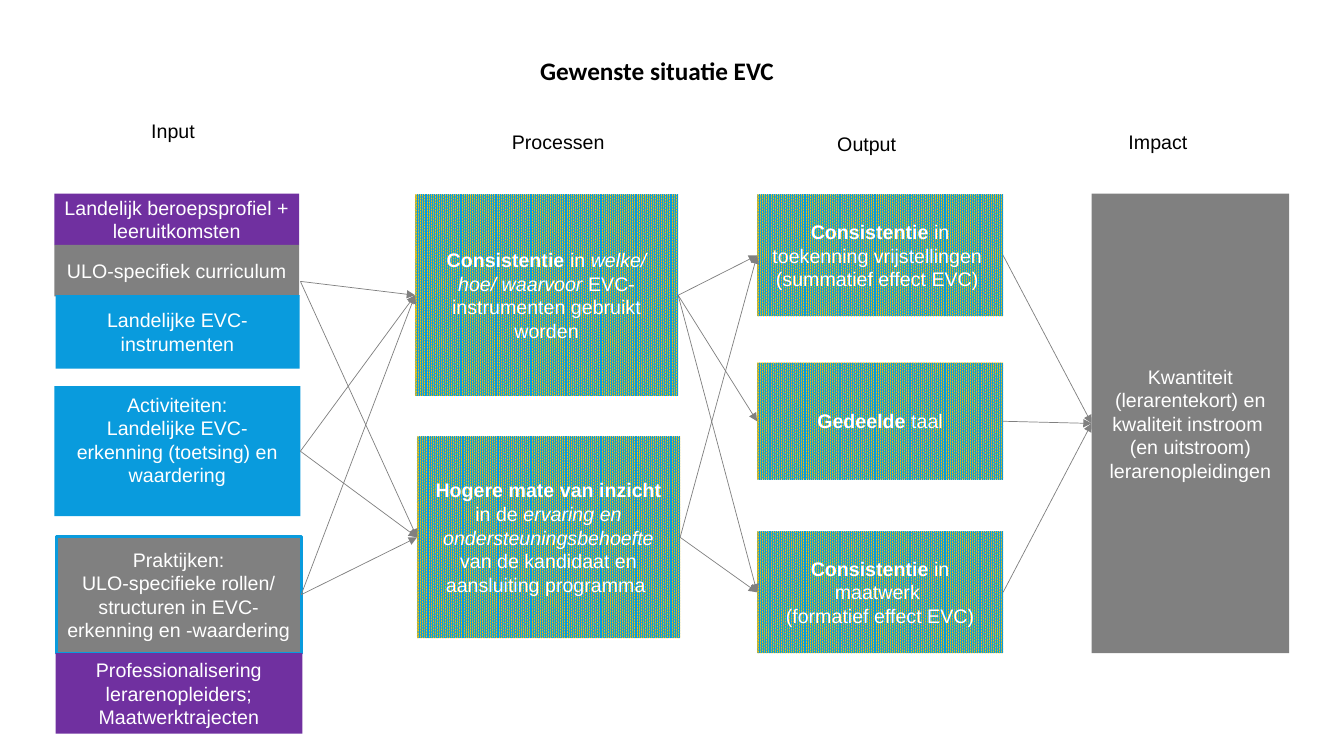
from lxml.etree import SubElement
from pptx import Presentation
from pptx.dml.color import RGBColor
from pptx.enum.dml import MSO_PATTERN
from pptx.enum.shapes import MSO_CONNECTOR, MSO_SHAPE
from pptx.enum.text import MSO_ANCHOR, PP_ALIGN
from pptx.oxml.ns import qn
from pptx.util import Cm, Pt

COLORS = {
    "blue": "099BDD",
    "gold": "FFC000",
    "grey": "808080",
    "purple": "7030A0",
    "white": "FFFFFF",
    "black": "000000",
}
BODY = {"name": "Arial", "size": Pt(14)}
TITLE = {"name": "Calibri", "size": Pt(18), "bold": True}
BOLD, ITALIC, PLAIN = {"bold": True}, {"italic": True}, {}
LEFT, TOP, RIGHT = 1, 0, 3
EMPTY_LINE = 0.57


def rgb(color):
    return RGBColor.from_string(COLORS[color])


def write(frame, paragraphs, color, align, base=BODY):
    """Fill a text frame; a paragraph is a string or a list of (text, format)."""
    frame.word_wrap = True
    for number, content in enumerate(paragraphs):
        paragraph = frame.paragraphs[0] if number == 0 else frame.add_paragraph()
        paragraph.alignment = align
        runs = [(content, PLAIN)] if isinstance(content, str) else content
        for words, extra in runs:
            run = paragraph.add_run()
            run.text = words
            run.font.color.rgb = rgb(color)
            for attribute, value in {**base, **extra}.items():
                setattr(run.font, attribute, value)


def add_label(slide, box, words, align=PP_ALIGN.LEFT, base=BODY):
    label = slide.shapes.add_textbox(*map(Cm, box))
    write(label.text_frame, [words], "black", align, base)


def add_block(slide, box, fill, paragraphs, border=None, space_below=0):
    """Draw a rectangle; the fill "striped" mixes blue and gold."""
    block = slide.shapes.add_shape(MSO_SHAPE.RECTANGLE, *map(Cm, box))
    block.shadow.inherit = False
    if fill == "striped":
        block.fill.patterned()
        block.fill.pattern = MSO_PATTERN.PERCENT_90
        block.fill.fore_color.rgb = rgb("blue")
        block.fill.back_color.rgb = rgb("gold")
    else:
        block.fill.solid()
        block.fill.fore_color.rgb = rgb(fill)
    if border:
        block.line.color.rgb = rgb(border)
        block.line.width = Pt(2.25)
    else:
        block.line.fill.background()
    frame = block.text_frame
    frame.vertical_anchor = MSO_ANCHOR.MIDDLE
    frame.margin_bottom = Cm(0.13 + space_below)
    write(frame, paragraphs, "white", PP_ALIGN.CENTER)
    return block


def add_column(slide, box, heading, blocks):
    """Place a heading and blocks, all offset from the column's corner."""
    left, top = box[:2]
    words, dx, dy, width = heading
    add_label(slide, (left + dx, top + dy, width, 0.86), words)
    return [
        add_block(slide, (left + x, top + y, w, h), *content)
        for (x, y, w, h), *content in blocks
    ]


def add_arrow(slide, source, target):
    """Run an arrow from a block, or from a free point, to a block."""
    is_point = isinstance(source, tuple)
    start = source if is_point else (
        source.left + source.width, source.top + source.height // 2)
    end = target.left, target.top + target.height // 2
    arrow = slide.shapes.add_connector(MSO_CONNECTOR.STRAIGHT, *start, *end)
    if not is_point:
        arrow.begin_connect(source, RIGHT)
    arrow.end_connect(target, LEFT)
    arrow.line.color.rgb = rgb("grey")
    arrow.line.width = Pt(0.5)
    SubElement(arrow.line._get_or_add_ln(), qn("a:tailEnd"), type="triangle")
    SubElement(arrow._element.spPr, qn("a:effectLst"))


def add_input(slide, box):
    return add_column(slide, box, ("Input", 2.19, -2.01, 3.76), [
        ((0, 0, 6.17, 1.3), "purple", ["Landelijk beroepsprofiel + leeruitkomsten"]),
        ((0, 1.29, 6.17, 1.3), "grey", ["ULO-specifiek curriculum"]),
        ((0.03, 2.56, 6.15, 1.85), "blue", ["Landelijke EVC-instrumenten"]),
        ((0, 4.85, 6.2, 3.28), "blue",
         ["Activiteiten:", "Landelijke EVC-erkenning (toetsing) en waardering"],
         None, EMPTY_LINE),
        ((0.05, 8.63, 6.17, 2.95), "grey",
         ["Praktijken:",
          "ULO-specifieke rollen/ structuren in EVC-erkenning en -waardering"],
         "blue"),
        ((0.03, 11.58, 6.22, 2.03), "purple",
         ["Professionalisering lerarenopleiders; Maatwerktrajecten"]),
    ])


def add_processes(slide, box):
    return add_column(slide, box, ("Processen", 2.19, -1.75, 3.76), [
        ((0, 0, 6.63, 5.08), "striped",
         [[("Consistentie", BOLD), (" in ", PLAIN), ("welke/ hoe/ waarvoor", ITALIC),
           (" EVC-instrumenten gebruikt worden", PLAIN)]]),
        ((0.05, 6.1, 6.63, 5.08), "striped",
         [[("Hogere mate van inzicht", BOLD), (" in de ", PLAIN),
           ("ervaring en ondersteuningsbehoefte", ITALIC),
           (" van de kandidaat en aansluiting programma ", PLAIN)]]),
    ])


def add_output(slide, box):
    width = box[2]
    return add_column(slide, box, ("Output", 1.77, -1.7, 3.33), [
        ((0, 0, width, 3.07), "striped",
         [[("Consistentie", BOLD), (" in toekenning vrijstellingen ", PLAIN)],
          "(summatief effect EVC) "]),
        ((0, 4.24, width, 2.95), "striped",
         [[("Gedeelde", BOLD), (" taal", PLAIN)]]),
        ((0, 8.49, width, 3.07), "striped",
         [[("Consistentie", BOLD), (" in maatwerk ", PLAIN)],
          "(formatief effect EVC)"]),
    ])


def add_impact(slide, box):
    return add_column(slide, box, ("Impact", 0.68, -1.73, 2.18), [
        ((0, 0, *box[2:]), "grey",
         ["Kwantiteit (lerarentekort) en kwaliteit instroom ",
          "(en uitstroom) lerarenopleidingen"]),
    ])


def main():
    deck = Presentation()
    deck.slide_width, deck.slide_height = Cm(33.87), Cm(19.05)
    slide = deck.slides.add_slide(deck.slide_layouts[6])

    add_label(slide, (12.65, 1.27, 7.82, 1.02), "Gewenste situatie EVC",
              PP_ALIGN.CENTER, TITLE)
    inputs = add_input(slide, (1.37, 4.88, 6.25, 13.61))
    processes = add_processes(slide, (10.46, 4.9, 6.68, 11.18))
    outputs = add_output(slide, (19.08, 4.9, 6.2, 11.56))
    impacts = add_impact(slide, (27.51, 4.88, 4.98, 11.58))

    frameworks = (Cm(7.57), Cm(7.09))
    activities, practices = inputs[3:5]
    stages = [
        ([frameworks, activities, practices], processes),
        (processes[:1], outputs),
        (processes[1:], [outputs[0], outputs[2]]),
        (outputs, impacts),
    ]
    for sources, targets in stages:
        for source in sources:
            for target in targets:
                add_arrow(slide, source, target)

    deck.save("out.pptx")


if __name__ == "__main__":
    main()
